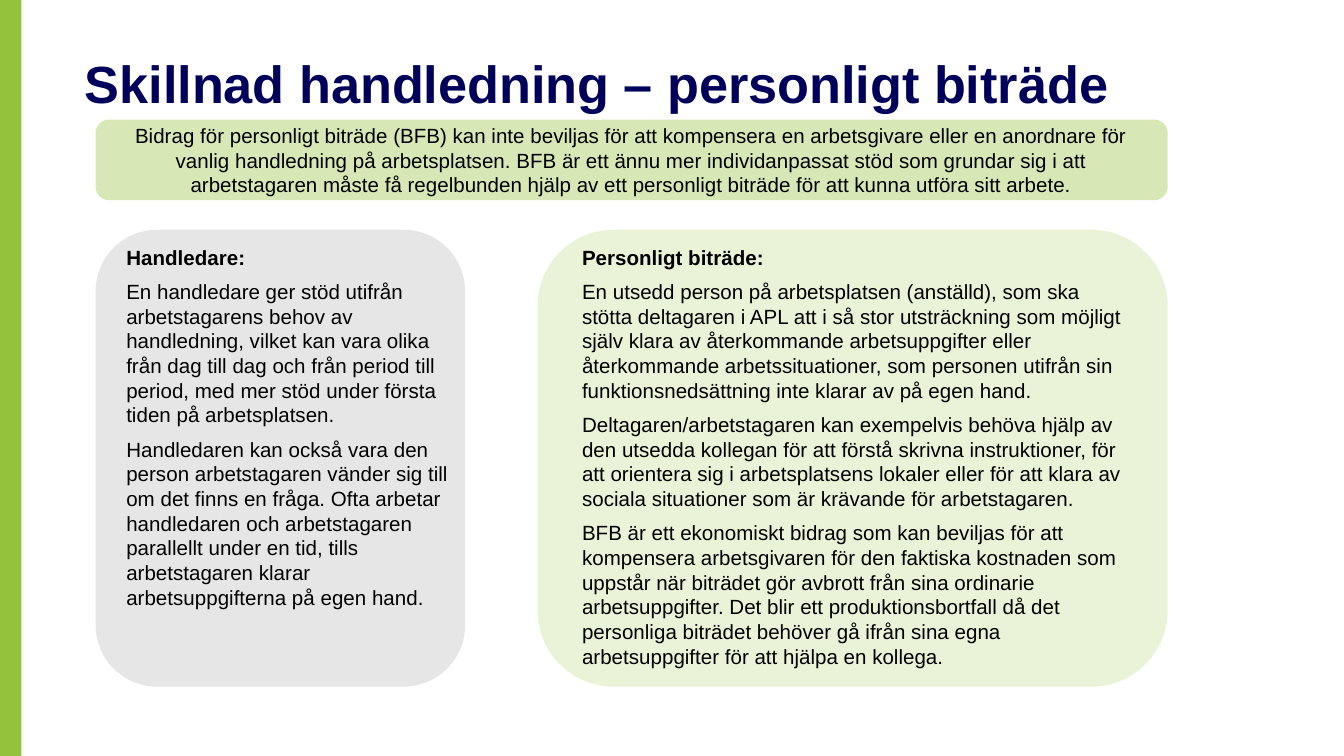
from pptx import Presentation, util as u
from pptx.dml.color import RGBColor
from pptx.enum import shapes, text

Pt = u.Pt
COLORS = {"bar": "95C23D", "banner": "D8E7B6", "assistant": "EAF2D8",
          "supervisor": "E7E6E6", "title": "00005A", "body": "000000"}

TITLE = "Skillnad handledning – personligt biträde"
BANNER = ("Bidrag för personligt biträde (BFB) kan inte beviljas för att kompensera en arbetsgivare "
          "eller en anordnare för vanlig handledning på arbetsplatsen. BFB är ett ännu mer "
          "individanpassat stöd som grundar sig i att arbetstagaren måste få regelbunden hjälp av "
          "ett personligt biträde för att kunna utföra sitt arbete.")
CARDS = [
    {"fill": "assistant", "left": 288, "width": 337.6, "text_left": 311.8, "text_width": 296.6,
     "heading": "Personligt biträde:",
     "body": [
         "En utsedd person på arbetsplatsen (anställd), som ska stötta deltagaren i APL att i så "
         "stor utsträckning som möjligt själv klara av återkommande arbetsuppgifter eller "
         "återkommande arbetssituationer, som personen utifrån sin funktionsnedsättning inte "
         "klarar av på egen hand.",
         "Deltagaren/arbetstagaren kan exempelvis behöva hjälp av den utsedda kollegan för att "
         "förstå skrivna instruktioner, för att orientera sig i arbetsplatsens lokaler eller för "
         "att klara av sociala situationer som är krävande för arbetstagaren.",
         "BFB är ett ekonomiskt bidrag som kan beviljas för att kompensera arbetsgivaren för den "
         "faktiska kostnaden som uppstår när biträdet gör avbrott från sina ordinarie "
         "arbetsuppgifter. Det blir ett produktionsbortfall då det personliga biträdet behöver gå "
         "ifrån sina egna arbetsuppgifter för att hjälpa en kollega."]},
    {"fill": "supervisor", "left": 51.2, "width": 198, "text_left": 67.7, "text_width": 175.7,
     "heading": "Handledare:",
     "body": [
         "En handledare ger stöd utifrån arbetstagarens behov av handledning, vilket kan vara "
         "olika från dag till dag och från period till period, med mer stöd under första tiden på "
         "arbetsplatsen.",
         "Handledaren kan också vara den person arbetstagaren vänder sig till om det finns en "
         "fråga. Ofta arbetar handledaren och arbetstagaren parallellt under en tid, tills "
         "arbetstagaren klarar arbetsuppgifterna på egen hand."]},
]
CARD_TOP, CARD_HEIGHT, TEXT_INSET = 123.1, 244.8, 8

prs = Presentation()
prs.slide_width, prs.slide_height = Pt(720), Pt(405)
s = prs.slides.add_slide(prs.slide_layouts[6])


def add_block(kind, color, *box):
    sp = s.shapes.add_shape(kind, *map(Pt, box))
    sp.shadow.inherit = False
    sp.fill.solid()
    sp.fill.fore_color.rgb = RGBColor.from_string(COLORS[color])
    sp.line.fill.background()
    return sp


def style(p, size=11, color="body", bold=False):
    p.font.name, p.font.size, p.font.bold = "Arial", Pt(size), bold
    p.font.color.rgb = RGBColor.from_string(COLORS[color])


def add_text(*box):
    tf = s.shapes.add_textbox(*map(Pt, box)).text_frame
    tf.word_wrap = True
    tf.margin_left = tf.margin_top = tf.margin_right = tf.margin_bottom = 0
    return tf


ROUNDED = shapes.MSO_SHAPE.ROUNDED_RECTANGLE
add_block(shapes.MSO_SHAPE.RECTANGLE, "bar", 0, 0, 11.5, 405)

tf = add_text(45.4, 25.2, 584.6, 38.2)
tf.vertical_anchor = text.MSO_ANCHOR.MIDDLE
tf.text = TITLE
style(tf.paragraphs[0], 28, "title", True)

for card in CARDS:
    add_block(ROUNDED, card["fill"], card["left"], CARD_TOP, card["width"], CARD_HEIGHT)
    tf = add_text(card["text_left"], CARD_TOP + TEXT_INSET,
                  card["text_width"], CARD_HEIGHT - 2 * TEXT_INSET)
    tf.text = "\n".join([card["heading"], *card["body"]])
    for i, p in enumerate(tf.paragraphs):
        style(p, bold=i == 0)
        if i:
            p.space_before = Pt(5.2)

tf = add_block(ROUNDED, "banner", 51.2, 64.1, 574.4, 43.2).text_frame
tf.word_wrap = True
tf.vertical_anchor = text.MSO_ANCHOR.MIDDLE
tf.text = BANNER
p = tf.paragraphs[0]
p.alignment = text.PP_ALIGN.CENTER
style(p)

prs.save("out.pptx")
